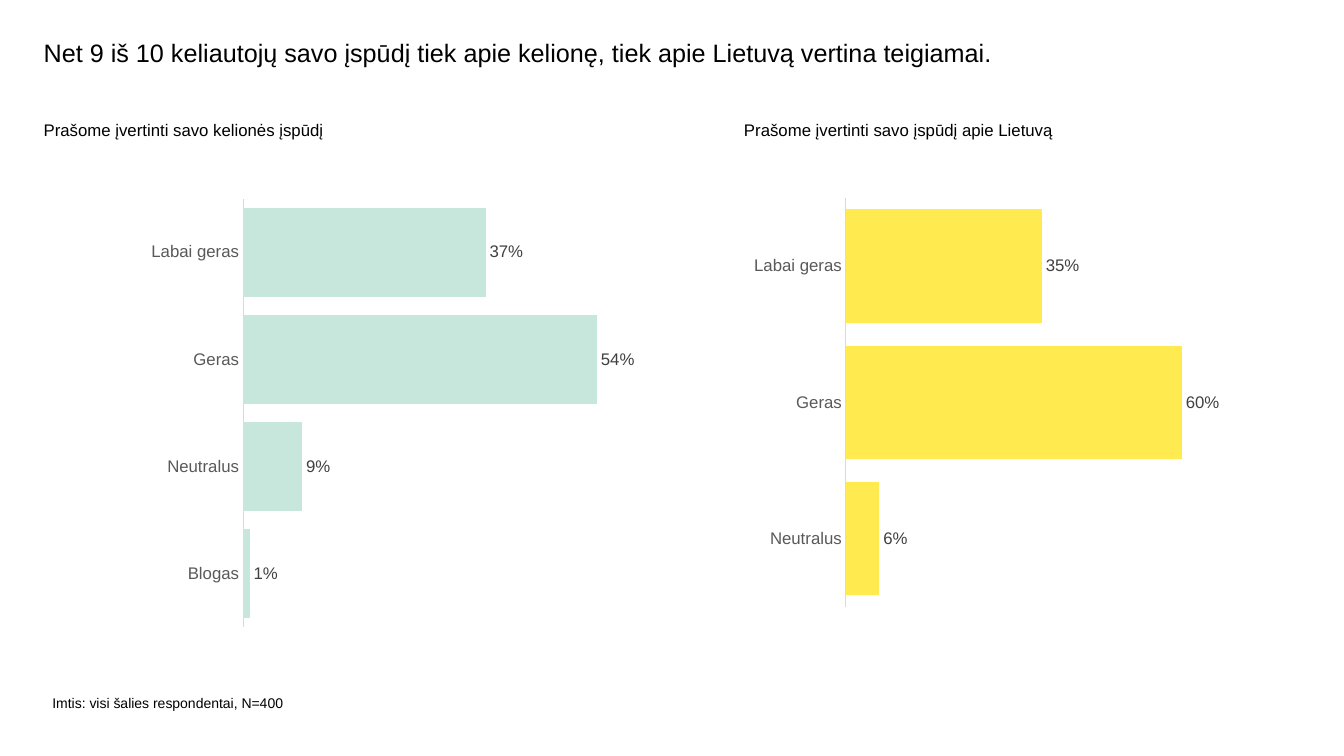
from pptx import Presentation
from pptx.chart.data import CategoryChartData
from pptx.dml.color import RGBColor
from pptx.enum.chart import XL_CHART_TYPE as ChartType, XL_LABEL_POSITION as LabelPos, XL_TICK_MARK as TickMark
from pptx.util import Cm, Pt

BLACK = RGBColor(0x00, 0x00, 0x00)
LABEL_GREY = RGBColor(0x40, 0x40, 0x40)
AXIS_GREY = RGBColor(0x59, 0x59, 0x59)
AXIS_LINE = RGBColor(0xD9, 0xD9, 0xD9)
MINT = RGBColor(0xC7, 0xE6, 0xDC)
YELLOW = RGBColor(0xFF, 0xEB, 0x50)
FONT = "Arial"


def style_font(font, size, color):
    font.name = FONT
    font.size = Pt(size)
    font.color.rgb = color


def add_text(slide, box, text, size, line_spacing=None):
    frame = slide.shapes.add_textbox(*box).text_frame
    frame.word_wrap = True
    frame.margin_left = frame.margin_right = frame.margin_top = frame.margin_bottom = 0
    paragraph = frame.paragraphs[0]
    paragraph.text = text
    paragraph.line_spacing = line_spacing
    style_font(paragraph.font, size, BLACK)


def add_ratings(slide, box, ratings, color, axis_max):
    data = CategoryChartData(number_format="0%")
    data.categories = list(ratings)
    data.add_series("Series 1", list(ratings.values()))
    chart = slide.shapes.add_chart(ChartType.BAR_CLUSTERED, *box, data).chart
    chart.has_legend = False
    chart.has_title = False
    style_font(chart.font, 10, BLACK)

    answers = chart.category_axis
    answers.reverse_order = True
    answers.major_tick_mark = answers.minor_tick_mark = TickMark.NONE
    answers.format.line.color.rgb = AXIS_LINE
    answers.format.line.width = Pt(0.75)
    style_font(answers.tick_labels.font, 12, AXIS_GREY)

    shares = chart.value_axis
    shares.visible = False
    shares.has_major_gridlines = False
    shares.minimum_scale = 0
    shares.maximum_scale = axis_max

    plot = chart.plots[0]
    plot.gap_width = 20
    plot.vary_by_categories = False
    bars = plot.series[0]
    bars.format.fill.solid()
    bars.format.fill.fore_color.rgb = color
    labels = bars.data_labels
    labels.show_value = True
    labels.number_format = "0%"
    labels.number_format_is_linked = False
    labels.position = LabelPos.OUTSIDE_END
    style_font(labels.font, 12, LABEL_GREY)


def add_question(slide, box, question, indent, chart_size, ratings, color, axis_max):
    left, top, width, height = box
    add_text(slide, (left, top, width, Cm(1.75)), question, 12)
    chart_box = (left + indent, top + Cm(1.77), *chart_size)
    add_ratings(slide, chart_box, ratings, color, axis_max)


def main():
    deck = Presentation()
    deck.slide_width, deck.slide_height = Cm(33.87), Cm(19.05)
    slide = deck.slides.add_slide(deck.slide_layouts[6])

    add_text(slide, (Cm(1.1), Cm(1.02), Cm(28.58), Cm(1.52)),
             "Net 9 iš 10 keliautojų savo įspūdį tiek apie kelionę, tiek apie Lietuvą vertina teigiamai.",
             18, 0.9)
    add_question(slide, (Cm(1.1), Cm(3.01), Cm(15.2), Cm(13)),
                 "Prašome įvertinti savo kelionės įspūdį", Cm(2.46), (Cm(12.73), Cm(11.25)),
                 {"Labai geras": 0.37, "Geras": 0.54, "Neutralus": 0.09, "Blogas": 0.01},
                 MINT, 0.6)
    add_question(slide, (Cm(18.75), Cm(3.01), Cm(14), Cm(12.5)),
                 "Prašome įvertinti savo įspūdį apie Lietuvą", Cm(0), (Cm(12.7), Cm(10.72)),
                 {"Labai geras": 0.35, "Geras": 0.6, "Neutralus": 0.06},
                 YELLOW, 0.7)
    add_text(slide, (Cm(1.32), Cm(17.5), Cm(9.8), Cm(1.12)),
             "Imtis: visi šalies respondentai, N=400", 10)

    deck.save("out.pptx")


if __name__ == "__main__":
    main()
